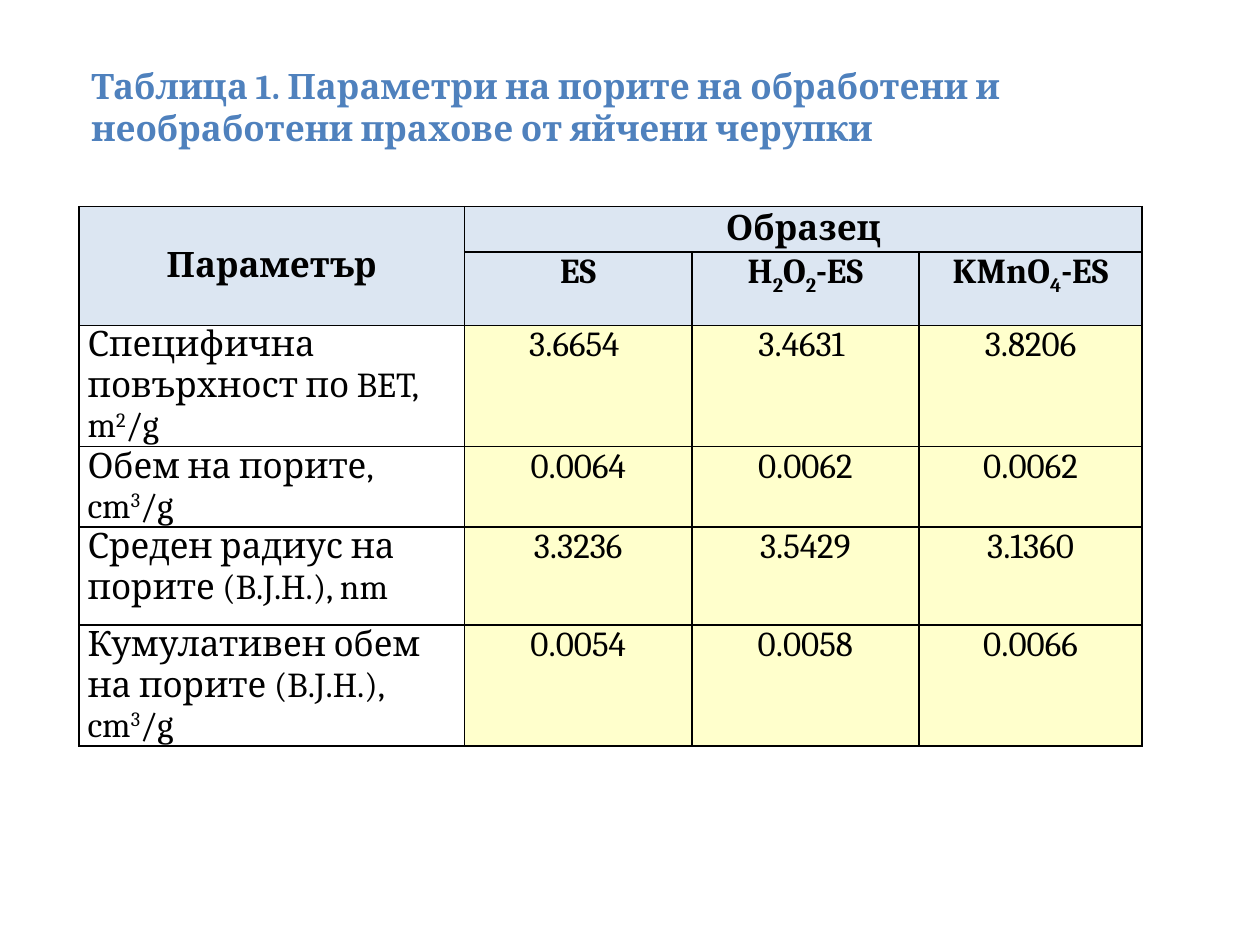
import lxml.etree
import pptx
import pptx.dml.color
import pptx.enum.text
import pptx.oxml.ns
import pptx.util

Pt = pptx.util.Pt
RGBColor = pptx.dml.color.RGBColor
Align = pptx.enum.text.PP_ALIGN
Anchor = pptx.enum.text.MSO_ANCHOR
qn = pptx.oxml.ns.qn

BLACK = RGBColor(0x00, 0x00, 0x00)
WHITE = RGBColor(0xFF, 0xFF, 0xFF)
TITLE_BLUE = RGBColor(0x4F, 0x81, 0xBD)
HEADER_BLUE = RGBColor(0xDC, 0xE6, 0xF2)
VALUE_YELLOW = RGBColor(0xFF, 0xFF, 0xCC)

TITLE = "Таблица 1. Параметри на порите на обработени и необработени прахове от яйчени черупки"
HEADERS = [
    ["Параметър", "Образец", "", ""],
    ["", "ES", "H|2|O|2|-ES", "KMnO|4|-ES"],
]
MEASUREMENTS = [
    ["Специфична повърхност по BET, m|2|/g", "3.6654 ", "3.4631 ", "3.8206"],
    ["Обем на порите, cm|3|/g", "0.0064", "0.0062", "0.0062"],
    ["Среден радиус на порите (B.J.H.), nm", "3.3236", "3.5429", "3.1360"],
    ["Кумулативен обем на порите (B.J.H.), cm|3|/g", "0.0054", "0.0058", "0.0066"],
]
COLUMN_WIDTHS = [220.5, 129.8, 129.8, 127.6]
ROW_HEIGHTS = [26, 42, 62.5, 29, 56, 56]


def write_text(frame, text, font="Cambria", size=20, color=BLACK, bold=False,
               align=Align.LEFT, shift=0):
    para = frame.paragraphs[0]
    para.alignment = align
    for index, part in enumerate(text.split("|")):
        span = para.add_run()
        span.text = part
        span.font.name = font
        span.font.size = Pt(size)
        span.font.bold = bold
        span.font.color.rgb = color
        if index % 2:
            span.font._element.set("baseline", str(shift * 1000))


class SlideBuilder:
    font = "Cambria"
    size = 20
    border_width = 1

    def __init__(self, page):
        self.page = page

    def title(self, text, left, top, width, height):
        box = self.page.shapes.title
        box.left, box.top, box.width, box.height = map(Pt, (left, top, width, height))
        frame = box.text_frame
        frame.word_wrap = True
        frame.auto_size = pptx.enum.text.MSO_AUTO_SIZE.NONE
        frame.vertical_anchor = Anchor.TOP
        write_text(frame, text, font=self.font, size=self.size, color=TITLE_BLUE, bold=True)

    def table(self, rows, header_count, left, top):
        grid = self.page.shapes.add_table(
            len(rows), len(COLUMN_WIDTHS), Pt(left), Pt(top),
            Pt(sum(COLUMN_WIDTHS)), Pt(sum(ROW_HEIGHTS))).table
        for column, width in zip(grid.columns, COLUMN_WIDTHS):
            column.width = Pt(width)
        for row, height in zip(grid.rows, ROW_HEIGHTS):
            row.height = Pt(height)
        for row_index, texts in enumerate(rows):
            for column_index, text in enumerate(texts):
                self.cell(grid.cell(row_index, column_index), text,
                          header=row_index < header_count, label=column_index == 0)
        return grid

    def cell(self, cell, text, header, label):
        cell.margin_left = cell.margin_right = Pt(5)
        cell.margin_top = cell.margin_bottom = 0
        cell.fill.solid()
        cell.fill.fore_color.rgb = HEADER_BLUE if header else WHITE if label else VALUE_YELLOW
        self.borders(cell)
        write_text(cell.text_frame, text, font=self.font, size=self.size, bold=header,
                   align=Align.LEFT if label and not header else Align.CENTER,
                   shift=-25 if header else 30)

    def borders(self, cell):
        properties = cell._tc.get_or_add_tcPr()
        for position, side in enumerate(("lnL", "lnR", "lnT", "lnB")):
            line = lxml.etree.Element(qn("a:" + side), w=str(Pt(self.border_width)))
            fill = lxml.etree.SubElement(line, qn("a:solidFill"))
            lxml.etree.SubElement(fill, qn("a:srgbClr"), val=str(BLACK))
            properties.insert(position, line)


def main():
    deck = pptx.Presentation()
    deck.slide_width, deck.slide_height = Pt(720), Pt(540)
    builder = SlideBuilder(deck.slides.add_slide(deck.slide_layouts[5]))
    grid = builder.table(HEADERS + MEASUREMENTS, len(HEADERS), 45, 118)
    grid.cell(0, 0).merge(grid.cell(1, 0))
    grid.cell(0, 1).merge(grid.cell(0, 3))
    for column in (0, 1):
        grid.cell(0, column).vertical_anchor = Anchor.MIDDLE
    builder.title(TITLE, 45, 33, 613.5, 78)
    deck.save("out.pptx")


if __name__ == "__main__":
    main()
